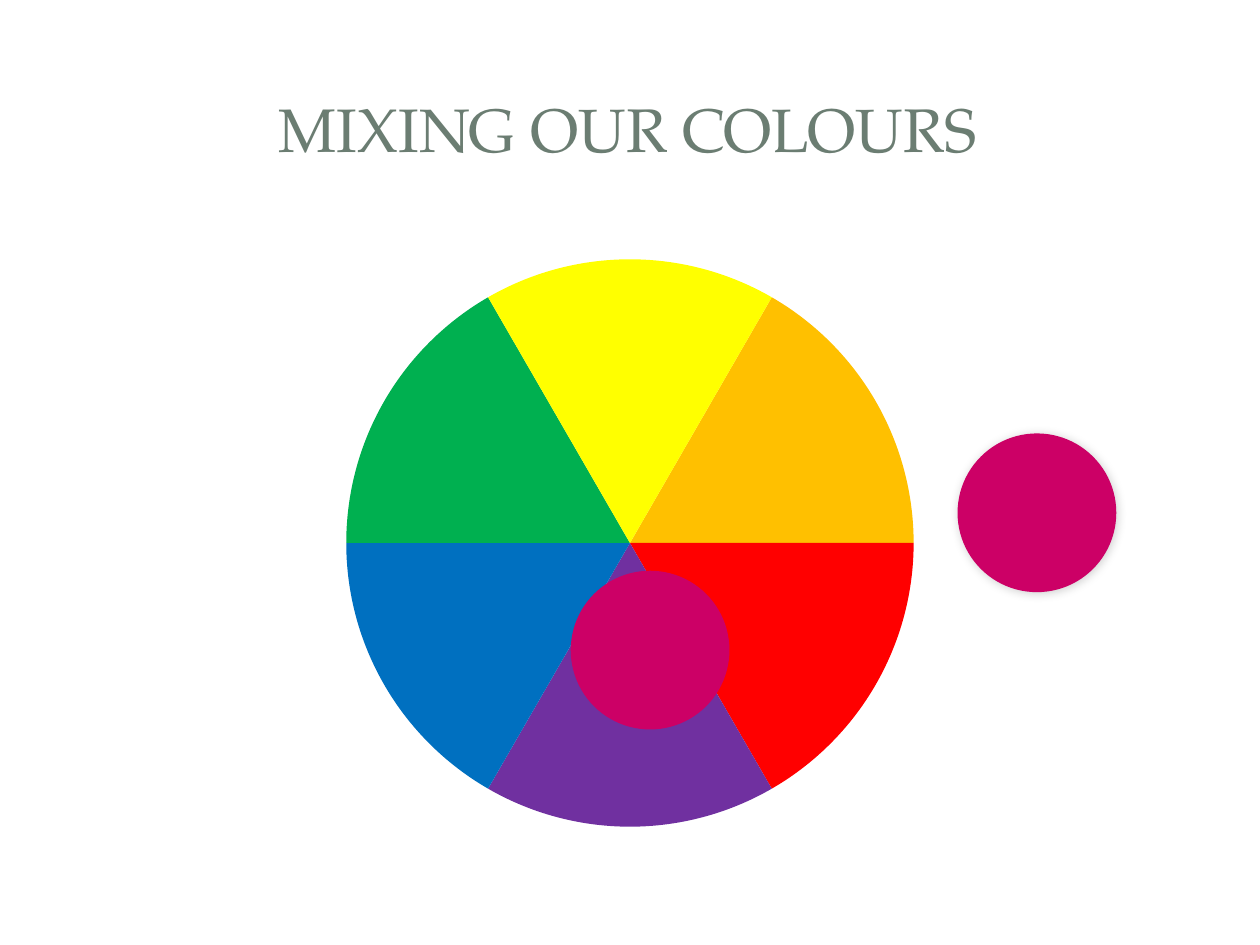
from lxml import etree
from pptx import Presentation
from pptx import util as u
from pptx.chart.data import CategoryChartData
from pptx.dml.color import RGBColor
from pptx.enum import chart as charts, shapes, text
from pptx.oxml.ns import qn

Inches = u.Inches
COLOURS = {
    "title": "6B7D72",
    "text": "000000",
    "dot": "CC0066",
    "shadow": "000000",
    "orange": "FFC000",
    "red": "FF0000",
    "purple": "7030A0",
    "blue": "0070C0",
    "green": "00B050",
    "yellow": "FFFF00",
}
WHEEL = ["orange", "red", "purple", "blue", "green", "yellow"]


def colour(name):
    return RGBColor.from_string(COLOURS[name])


def add_title(slide, left, top, width, height, words):
    box = slide.shapes.add_textbox(left, top, width, height)
    frame = box.text_frame
    frame.word_wrap = True
    frame.vertical_anchor = text.MSO_ANCHOR.MIDDLE
    paragraph = frame.paragraphs[0]
    paragraph.alignment = text.PP_ALIGN.CENTER
    run = paragraph.add_run()
    run.text = words
    run.font.size = u.Pt(35)
    run.font.name = "TeX Gyre Pagella"
    run.font.color.rgb = colour("title")


def add_wheel(slide, left, top, width, height):
    data = CategoryChartData()
    data.categories = [str(number) for number in range(1, len(WHEEL) + 1)]
    data.add_series("Series 1", [17] * len(WHEEL))
    frame = slide.shapes.add_chart(
        charts.XL_CHART_TYPE.PIE, left, top, width, height, data)
    chart = frame.chart
    chart.has_title = False
    chart.has_legend = False
    chart.font.name = "TeX Gyre Adventor"
    chart.font.size = u.Pt(18)
    chart.font.color.rgb = colour("text")
    plot = chart.plots[0]
    plot.vary_by_categories = True
    series = plot.series[0]
    for index, name in enumerate(WHEEL):
        point = series.points[index].format
        point.fill.solid()
        point.fill.fore_color.rgb = colour(name)
        point.line.fill.background()
    pie = chart.element.find(".//" + qn("c:pieChart"))
    angle = pie.find(qn("c:firstSliceAng"))
    if angle is None:
        angle = etree.SubElement(pie, qn("c:firstSliceAng"))
    angle.set("val", "30")


def add_shadow(shape):
    effects = shape.element.spPr.find(qn("a:effectLst"))
    shadow = etree.SubElement(
        effects, qn("a:outerShdw"), blurRad=str(u.Pt(6)), dist=str(u.Pt(1)),
        dir=str(45 * 60000), algn="tl", rotWithShape="0")
    tint = etree.SubElement(shadow, qn("a:srgbClr"), val=COLOURS["shadow"])
    etree.SubElement(tint, qn("a:alpha"), val="20000")


def add_dot(slide, left, top, size):
    dot = slide.shapes.add_shape(shapes.MSO_SHAPE.OVAL, left, top, size, size)
    dot.shadow.inherit = False
    dot.fill.solid()
    dot.fill.fore_color.rgb = colour("dot")
    dot.line.fill.background()
    return dot


def main():
    presentation = Presentation()
    presentation.slide_width = Inches(10)
    presentation.slide_height = Inches(7.5)
    slide = presentation.slides.add_slide(presentation.slide_layouts[6])
    add_title(slide, Inches(0.47), Inches(0.45), Inches(9.03), Inches(1.14),
              "MIXING OUR COLOURS")
    add_wheel(slide, Inches(0.5), Inches(1.92), Inches(9), Inches(4.78))
    add_shadow(add_dot(slide, Inches(7.6), Inches(3.44), Inches(1.26)))
    add_dot(slide, Inches(4.53), Inches(4.53), Inches(1.26))
    presentation.save("out.pptx")


if __name__ == "__main__":
    main()
